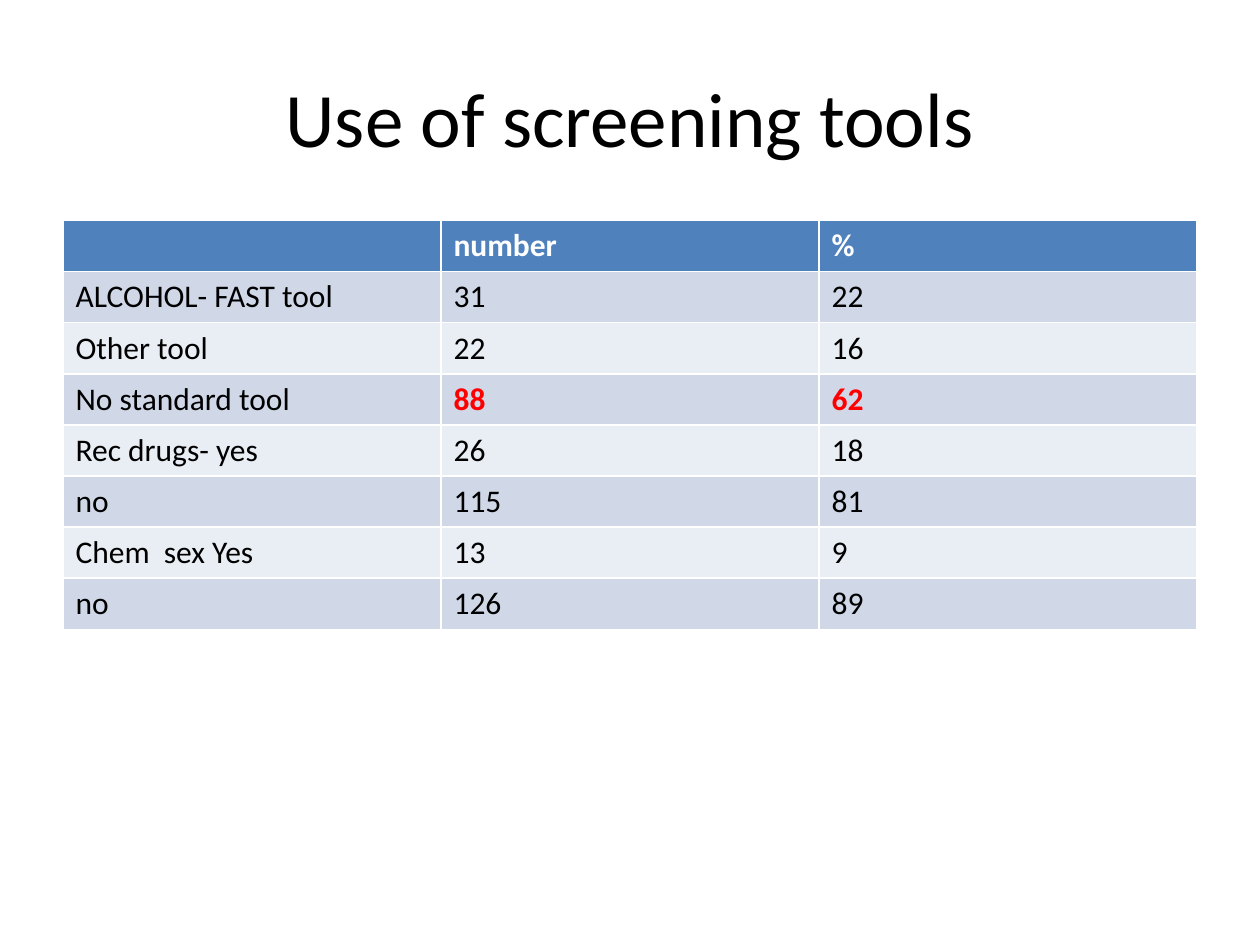
from pptx import Presentation
from pptx.dml.color import RGBColor
from pptx.enum.text import MSO_ANCHOR, PP_ALIGN
from pptx.util import Inches, Pt

MIDDLE = MSO_ANCHOR.MIDDLE
CENTER = PP_ALIGN.CENTER

TITLE = "Use of screening tools"
HEADER = ("", "number", "%")
RESULTS = [
    ("ALCOHOL- FAST tool", 31, 22),
    ("Other tool", 22, 16),
    ("No standard tool", 88, 62),
    ("Rec drugs- yes", 26, 18),
    ("no", 115, 81),
    ("Chem  sex Yes", 13, 9),
    ("no", 126, 89),
]
HIGHLIGHTED_ROW = 3

FONT = "Calibri"
BLACK = RGBColor(0x00, 0x00, 0x00)
WHITE = RGBColor(0xFF, 0xFF, 0xFF)
RED = RGBColor(0xFF, 0x00, 0x00)
HEADER_BLUE = RGBColor(0x4F, 0x81, 0xBD)
BANDS = (RGBColor(0xE9, 0xED, 0xF4), RGBColor(0xD0, 0xD8, 0xE8))

SLIDE_WIDTH, SLIDE_HEIGHT = Inches(10), Inches(7.5)
MARGIN = Inches(0.5)
CONTENT_WIDTH = SLIDE_WIDTH - 2 * MARGIN
TABLE_TOP = Inches(1.75)
ROW_HEIGHT = Pt(29.2)


def set_font(paragraph, size, color, bold=False):
    font = paragraph.font
    font.name, font.size, font.bold = FONT, Pt(size), bold
    font.color.rgb = color


def add_title(slide):
    title = slide.shapes.title
    title.left, title.top = MARGIN, Inches(0.3)
    title.width, title.height = CONTENT_WIDTH, Inches(1.25)
    title.text_frame.text = TITLE
    title.text_frame.vertical_anchor = MIDDLE
    paragraph = title.text_frame.paragraphs[0]
    paragraph.alignment = CENTER
    set_font(paragraph, 44, BLACK)


def cell_style(row, column):
    """Return the fill, text colour and boldness of a cell."""
    if row == 0:
        return HEADER_BLUE, WHITE, True
    if row == HIGHLIGHTED_ROW and column > 0:
        return BANDS[row % 2], RED, True
    return BANDS[row % 2], BLACK, False


def add_results_table(slide):
    rows = [HEADER] + RESULTS
    # The default table style supplies the white borders and the thick header rule.
    table = slide.shapes.add_table(
        len(rows), len(HEADER), MARGIN, TABLE_TOP,
        CONTENT_WIDTH, ROW_HEIGHT * len(rows)).table
    for row, values in enumerate(rows):
        for column, value in enumerate(values):
            fill, color, bold = cell_style(row, column)
            cell = table.cell(row, column)
            cell.fill.solid()
            cell.fill.fore_color.rgb = fill
            cell.text = str(value)
            set_font(cell.text_frame.paragraphs[0], 18, color, bold)


def main():
    presentation = Presentation()
    presentation.slide_width = SLIDE_WIDTH
    presentation.slide_height = SLIDE_HEIGHT
    title_only = presentation.slide_layouts[5]
    slide = presentation.slides.add_slide(title_only)
    add_title(slide)
    add_results_table(slide)
    presentation.save("out.pptx")


if __name__ == "__main__":
    main()
